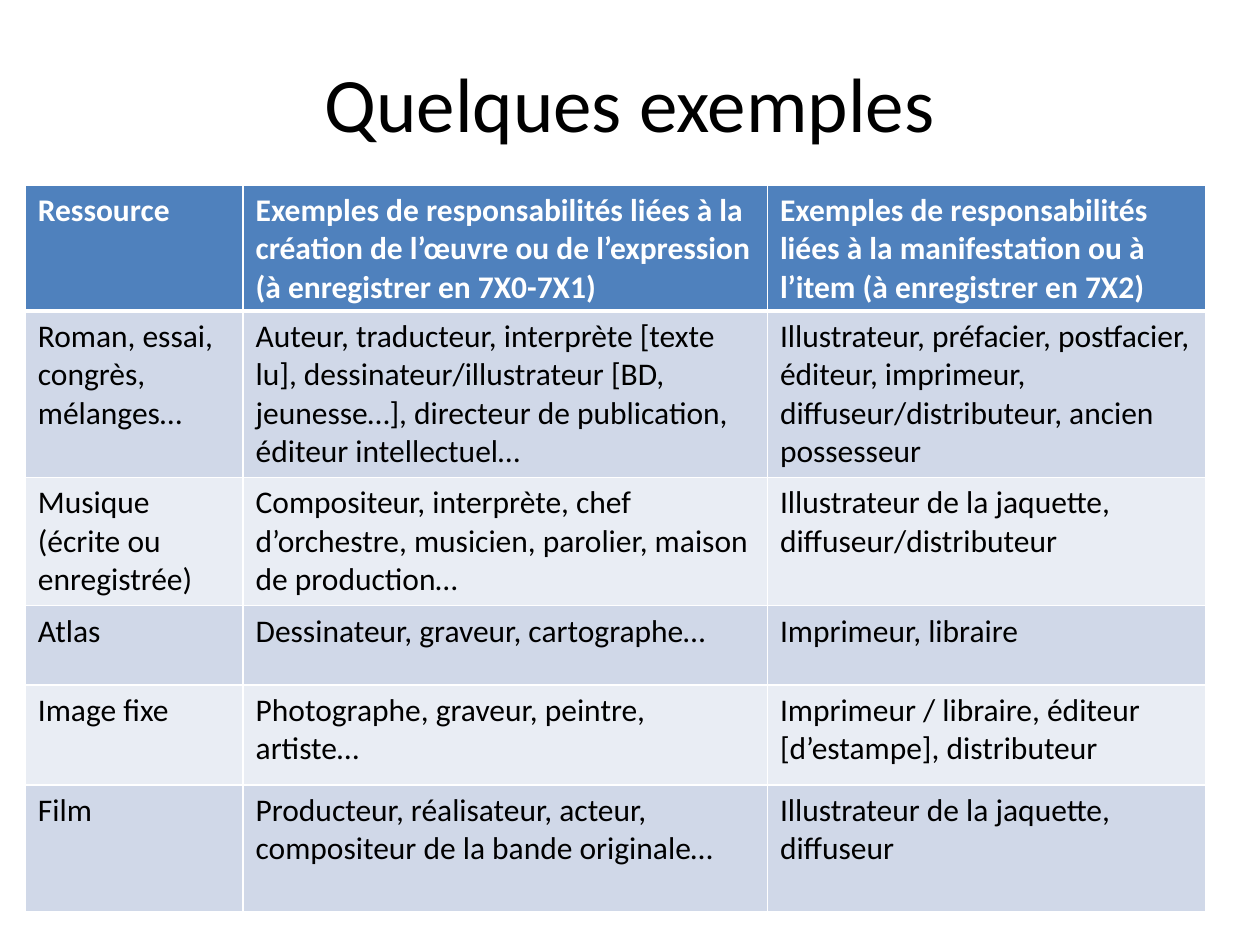
import dataclasses
import typing

import pptx
import pptx.dml.color
import pptx.enum.text
import pptx.oxml
import pptx.oxml.ns
import pptx.util

Cm = pptx.util.Cm
Pt = pptx.util.Pt


@dataclasses.dataclass(frozen=True)
class Theme:
    font: str = "Calibri"
    title_size: int = 44
    table_size: int = 18
    ink: str = "000000"
    paper: str = "FFFFFF"
    header: str = "4F81BD"
    bands: tuple[str, str] = ("D0D8E8", "E9EDF4")
    rule: float = 1
    header_rule: float = 3


@dataclasses.dataclass(frozen=True)
class Row:
    height: float
    resource: str
    creation: str
    item: str


THEME = Theme()
COLUMN_WIDTHS = (4.39, 10.57, 8.84)
ROWS = (
    Row(2.54, "Ressource",
        "Exemples de responsabilités liées à la création de l’œuvre ou de "
        "l’expression (à enregistrer en 7X0-7X1)",
        "Exemples de responsabilités liées à la manifestation ou à l’item "
        "(à enregistrer en 7X2)"),
    Row(3.35, "Roman, essai, congrès, mélanges…",
        "Auteur, traducteur, interprète [texte lu], dessinateur/illustrateur "
        "[BD, jeunesse…], directeur de publication, éditeur intellectuel…",
        "Illustrateur, préfacier, postfacier, éditeur, imprimeur, "
        "diffuseur/distributeur, ancien possesseur"),
    Row(2.59, "Musique (écrite ou enregistrée)",
        "Compositeur, interprète, chef d’orchestre, musicien, parolier, "
        "maison de production…",
        "Illustrateur de la jaquette, diffuseur/distributeur"),
    Row(1.6, "Atlas", "Dessinateur, graveur, cartographe…",
        "Imprimeur, libraire"),
    Row(2.01, "Image fixe", "Photographe, graveur, peintre, artiste…",
        "Imprimeur / libraire, éditeur [d’estampe], distributeur"),
    Row(2.56, "Film",
        "Producteur, réalisateur, acteur, compositeur de la bande originale…",
        "Illustrateur de la jaquette, diffuseur"),
)


def rgb(color: str) -> pptx.dml.color.RGBColor:
    return pptx.dml.color.RGBColor.from_string(color)


def add_span(para: typing.Any, text: str, size: int, color: str,
             bold: bool = False) -> None:
    span = para.add_run()
    span.text = text
    span.font.name = THEME.font
    span.font.size = Pt(size)
    span.font.bold = bold
    span.font.color.rgb = rgb(color)


def set_borders(cell: typing.Any, top: float, bottom: float) -> None:
    """Border lines must come before the fill in the cell properties."""
    properties = cell._tc.get_or_add_tcPr()
    widths = {"lnL": THEME.rule, "lnR": THEME.rule, "lnT": top, "lnB": bottom}
    for position, (side, width) in enumerate(widths.items()):
        line = pptx.oxml.parse_xml(
            f'<a:{side} {pptx.oxml.ns.nsdecls("a")} w="{Pt(width)}">'
            f'<a:solidFill><a:srgbClr val="{THEME.paper}"/></a:solidFill>'
            f'</a:{side}>')
        properties.insert(position, line)


def add_title(page: typing.Any, text: str) -> None:
    box = page.shapes.add_textbox(Cm(1.27), Cm(0.76), Cm(22.86), Cm(2.57))
    frame = box.text_frame
    frame.word_wrap = True
    frame.vertical_anchor = pptx.enum.text.MSO_ANCHOR.MIDDLE
    para = frame.paragraphs[0]
    para.alignment = pptx.enum.text.PP_ALIGN.CENTER
    add_span(para, text, THEME.title_size, THEME.ink)


def add_examples(page: typing.Any, rows: tuple[Row, ...]) -> None:
    table = page.shapes.add_table(
        len(rows), len(COLUMN_WIDTHS), Cm(0.51), Cm(3.73),
        Cm(sum(COLUMN_WIDTHS)), Cm(sum(row.height for row in rows))).table
    for column, width in zip(table.columns, COLUMN_WIDTHS):
        column.width = Cm(width)

    for index, row in enumerate(rows):
        table.rows[index].height = Cm(row.height)
        is_header = index == 0
        fill = THEME.header if is_header else THEME.bands[(index - 1) % 2]
        color = THEME.paper if is_header else THEME.ink
        top = THEME.header_rule if index == 1 else THEME.rule
        bottom = THEME.header_rule if is_header else THEME.rule
        for column, text in enumerate((row.resource, row.creation, row.item)):
            cell = table.cell(index, column)
            cell.fill.solid()
            cell.fill.fore_color.rgb = rgb(fill)
            set_borders(cell, top, bottom)
            add_span(cell.text_frame.paragraphs[0], text, THEME.table_size,
                     color, is_header)


def main() -> None:
    deck = pptx.Presentation()
    deck.slide_width, deck.slide_height = Cm(25.4), Cm(19.05)
    page = deck.slides.add_slide(deck.slide_layouts[6])

    # Title
    add_title(page, "Quelques exemples")

    # Table of responsibilities by kind of resource
    add_examples(page, ROWS)

    deck.save("out.pptx")


if __name__ == "__main__":
    main()
